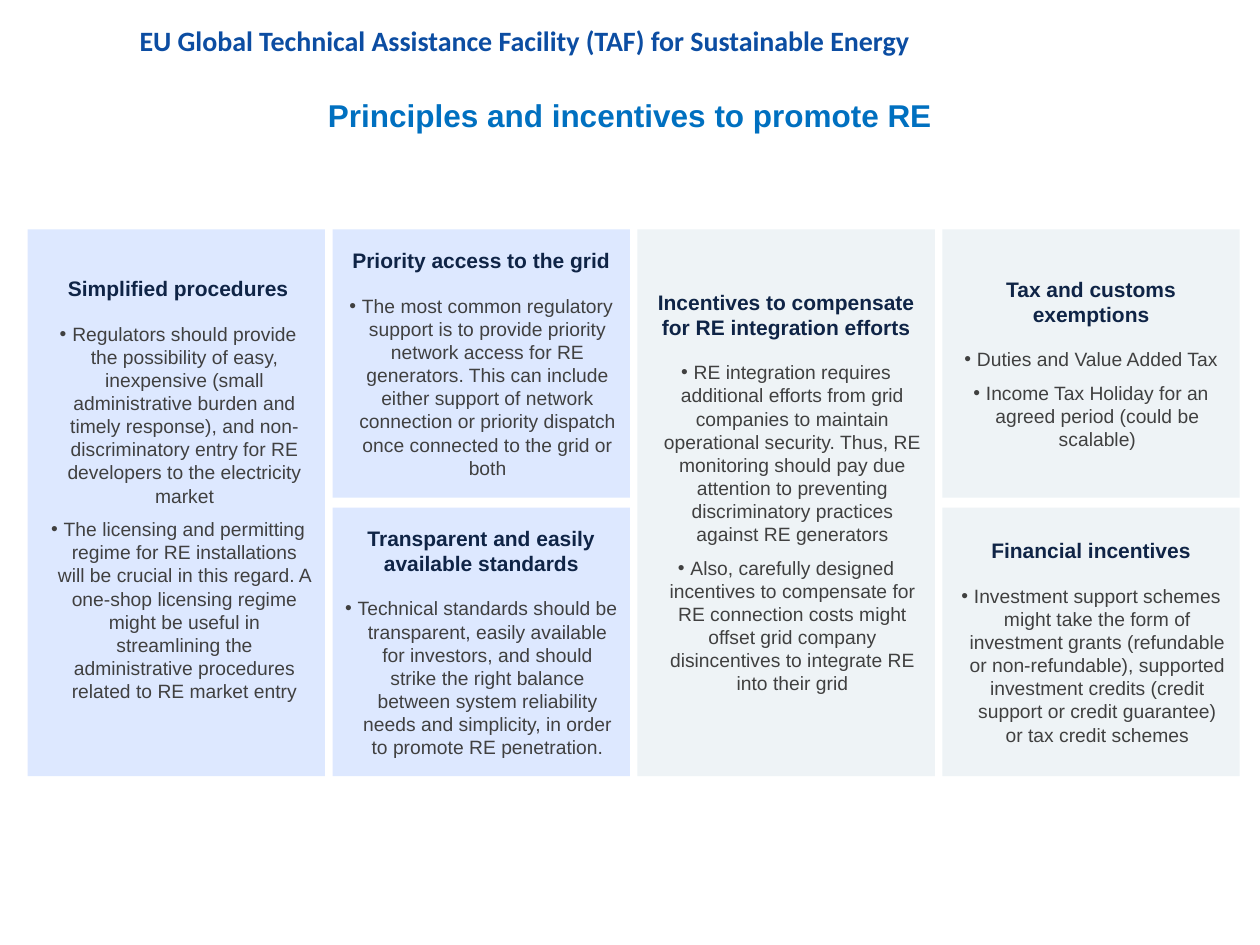
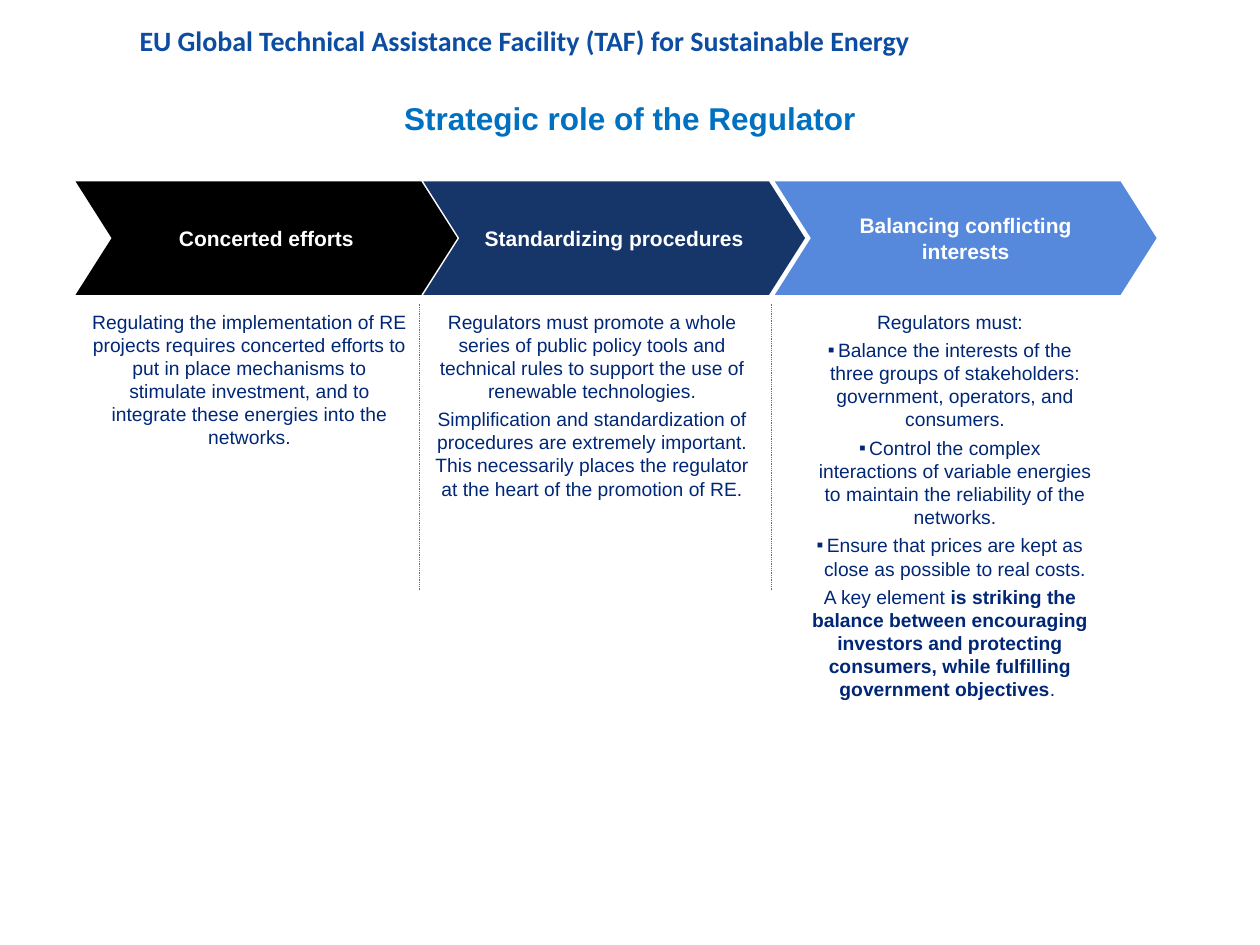
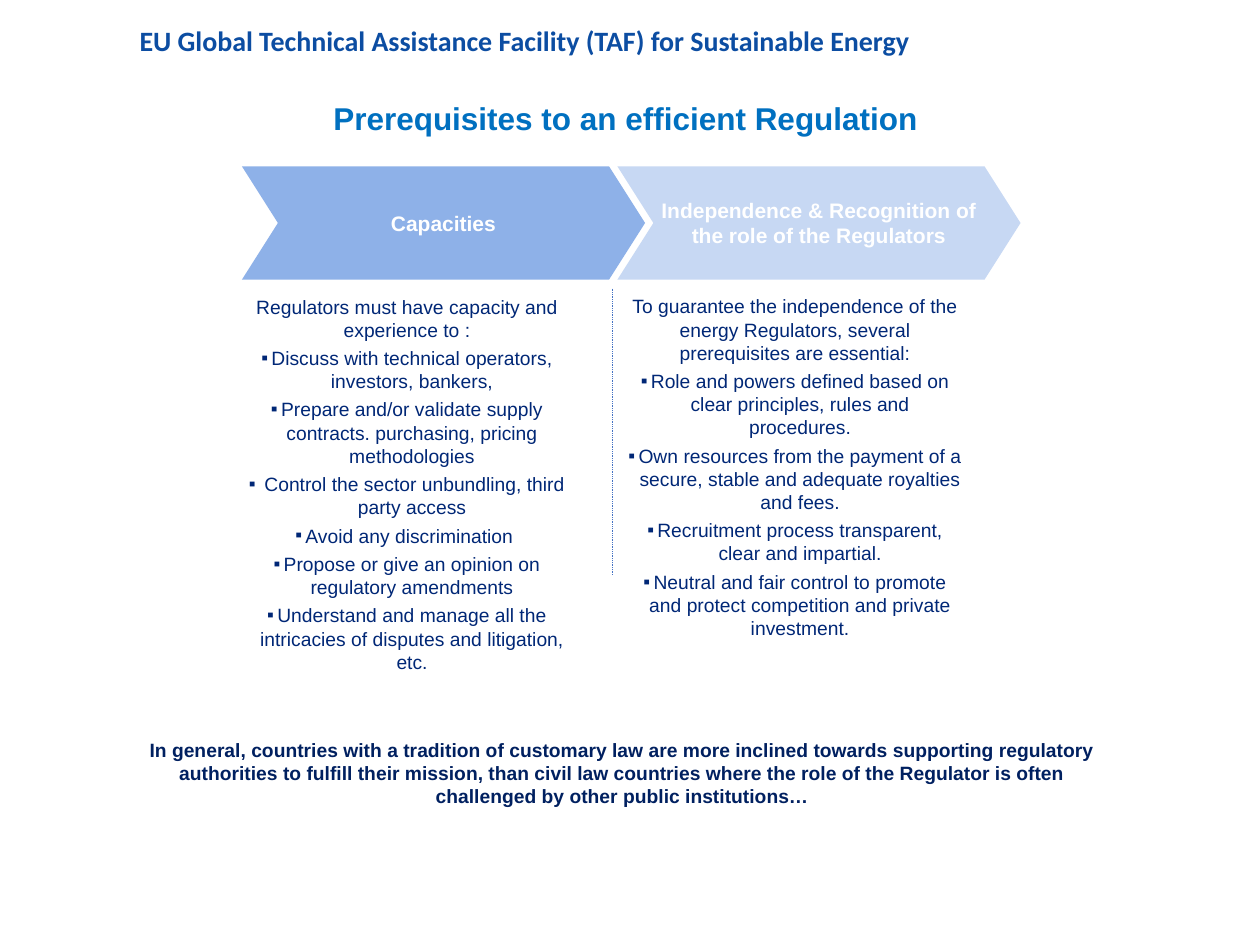
from lxml import etree
from pptx import Presentation
from pptx.dml.color import RGBColor
from pptx.enum.dml import MSO_LINE
from pptx.enum.shapes import MSO_CONNECTOR, MSO_SHAPE
from pptx.enum.text import MSO_ANCHOR, PP_ALIGN
from pptx.oxml.ns import qn
from pptx.util import Inches, Pt

HEADER_BLUE = RGBColor(0x0C, 0x4D, 0xA2)
TITLE_BLUE = RGBColor(0x00, 0x70, 0xC0)
HEADING_NAVY = RGBColor(0x0F, 0x24, 0x46)
BODY_GREY = RGBColor(0x40, 0x40, 0x40)
BODY_NAVY = RGBColor(0x00, 0x27, 0x76)
CLOSING_NAVY = RGBColor(0x00, 0x20, 0x60)
DIVIDER_BLUE = RGBColor(0x44, 0x72, 0xC4)
TILE_BLUE = RGBColor(0xDD, 0xE8, 0xFF)
TILE_GREY = RGBColor(0xEE, 0xF3, 0xF6)
WHITE = RGBColor(0xFF, 0xFF, 0xFF)
BLACK = RGBColor(0x00, 0x00, 0x00)
CHEVRON_NAVY = RGBColor(0x16, 0x36, 0x6A)
CHEVRON_BLUE = RGBColor(0x56, 0x89, 0xDC)
CHEVRON_LIGHT = RGBColor(0x8E, 0xB1, 0xE8)
CHEVRON_PALE = RGBColor(0xC7, 0xD8, 0xF3)

# style: font, size, colour, bold, space before, space after, bullet, indent
STYLES = {
    "header": ("Calibri", 16, HEADER_BLUE, True, 0, 0, None, 0),
    "title": ("Arial", 18, TITLE_BLUE, True, 0, 0, None, 0),
    "tile heading": ("Arial", 12, HEADING_NAVY, True, 0, 12, None, 0),
    "tile point": ("Arial", 11, BODY_GREY, False, 0, 6, "•", 0.1),
    "chevron": ("Arial", 12, WHITE, True, 0, 0, None, 0),
    "body": ("Arial", 11, BODY_NAVY, False, 1.5, 1.5, None, 0),
    "point": ("Arial", 11, BODY_NAVY, False, 1.5, 1.5, "▪", 0.08),
    "closing": ("Arial", 11, CLOSING_NAVY, True, 0, 0, None, 0),
}


def write_text(shape, rows, insets=(0.1, 0.05, 0.1, 0.05), align=PP_ALIGN.CENTER):
    frame = shape.text_frame
    frame.word_wrap = True
    frame.margin_left, frame.margin_top, frame.margin_right, frame.margin_bottom = map(Inches, insets)
    for index, (style, text) in enumerate(rows):
        font, size, colour, bold, before, after, bullet, indent = STYLES[style]
        para = frame.add_paragraph() if index else frame.paragraphs[0]
        para.alignment = align
        para.space_before = Pt(before if index else 0)
        para.space_after = Pt(after)
        if bullet:
            properties = para._p.get_or_add_pPr()
            properties.set("marL", str(Inches(indent)))
            properties.set("indent", str(-Inches(indent)))
            etree.SubElement(properties, qn("a:buFont")).set("typeface", "Arial")
            etree.SubElement(properties, qn("a:buChar")).set("char", bullet)
        for part, words in enumerate(text.split("*")):
            span = para.add_run()
            span.text = words
            span.font.name = font
            span.font.size = Pt(size)
            span.font.color.rgb = colour
            span.font.bold = bold or part % 2 == 1


def add_page(title, title_top):
    page = deck.slides.add_slide(deck.slide_layouts[6])
    header = page.shapes.add_textbox(Inches(1.01), Inches(0.14), Inches(8.66), Inches(0.34))
    write_text(header, [("header", "EU Global Technical Assistance Facility (TAF) for Sustainable Energy")],
               align=PP_ALIGN.LEFT)
    title_box = page.shapes.add_textbox(0, Inches(title_top), deck.slide_width, Inches(0.4))
    write_text(title_box, [("title", title)])
    return page


deck = Presentation()
deck.slide_width, deck.slide_height = Inches(10), Inches(7.5)

page = add_page("Principles and incentives to promote RE", 0.71)
TILE_WIDTH, TILE_HEIGHT = 2.36, 2.13
COLUMN_GAP, ROW_GAP = 0.06, 0.08
# column, row, rows spanned, fill, bottom inset, heading, points
tiles = [
    (0, 0, 2, TILE_BLUE, 0.05, None, []),
    (1, 0, 1, TILE_BLUE, 0.05, "Priority access to the grid", [
        "The most common regulatory support is to provide priority network access for RE generators. "
        "This can include either support of network connection or priority dispatch once connected "
        "to the grid or both"]),
    (1, 1, 1, TILE_BLUE, 0.05, "Transparent and easily available standards", [
        "Technical standards should be transparent, easily available for investors, and should strike "
        "the right balance between system reliability needs and simplicity, in order to promote RE "
        "penetration."]),
    (2, 0, 2, TILE_GREY, 0.22, "Incentives to compensate for RE integration efforts", [
        "RE integration requires additional efforts from grid companies to maintain operational "
        "security. Thus, RE monitoring should pay due attention to preventing discriminatory "
        "practices against RE generators",
        "Also, carefully designed incentives to compensate for RE connection costs might offset grid "
        "company disincentives to integrate RE into their grid"]),
    (3, 0, 1, TILE_GREY, 0.05, "Tax and customs exemptions", [
        "Duties and Value Added Tax",
        "Income Tax Holiday for an agreed period (could be scalable)"]),
    (3, 1, 1, TILE_GREY, 0.05, "Financial incentives", [
        "Investment support schemes might take the form of investment grants (refundable or "
        "non-refundable), supported investment credits (credit support or credit guarantee) or tax "
        "credit schemes"]),
]
for column, row, span_rows, fill, bottom_inset, heading, points in tiles:
    tile = page.shapes.add_shape(
        MSO_SHAPE.RECTANGLE,
        Inches(0.22 + column * (TILE_WIDTH + COLUMN_GAP)), Inches(1.82 + row * (TILE_HEIGHT + ROW_GAP)),
        Inches(TILE_WIDTH), Inches(span_rows * TILE_HEIGHT + (span_rows - 1) * ROW_GAP))
    tile.shadow.inherit = False
    tile.fill.solid()
    tile.fill.fore_color.rgb = fill
    tile.line.fill.background()
    tile.text_frame.vertical_anchor = MSO_ANCHOR.MIDDLE
    if heading:
        write_text(tile, [("tile heading", heading)] + [("tile point", point) for point in points],
                   (0.1, 0.05, 0.1, bottom_inset))

procedures = page.shapes.add_textbox(Inches(0.25), Inches(2.14), Inches(2.33), Inches(3.52))
write_text(procedures, [
    ("tile heading", "Simplified procedures"),
    ("tile point", "Regulators should provide the possibility of easy, inexpensive (small administrative "
                   "burden and timely response), and non-discriminatory entry for RE developers to the "
                   "electricity market"),
    ("tile point", "The licensing and permitting regime for RE installations will be crucial in this "
                   "regard. A one-shop licensing regime might be useful in streamlining the "
                   "administrative procedures related to RE market entry"),
])

# title, chevron top, chevron width, divider positions, stages
# stage: chevron left, fill, heading, text left, text width, text height, rows
stage_pages = [
    ("Strategic role of the Regulator", 1.44, 3.03, [3.33, 6.12], [
        (0.6, BLACK, "Concerted efforts", 0.73, 2.6, 1.95, [
            ("body", "Regulating the implementation of RE projects requires concerted efforts to put in "
                     "place mechanisms to stimulate investment, and to integrate these energies into "
                     "the networks.")]),
        (3.36, CHEVRON_NAVY, "Standardizing procedures", 3.45, 2.6, 2.93, [
            ("body", "Regulators must promote a whole series of public policy tools and technical rules "
                     "to support the use of renewable technologies."),
            ("body", "Simplification and standardization of procedures are extremely important. This "
                     "necessarily places the regulator at the heart of the promotion of RE.")]),
        (6.15, CHEVRON_BLUE, "Balancing conflicting interests", 6.41, 2.36, 3.29, [
            ("body", "Regulators must:"),
            ("point", "Balance the interests of the three groups of stakeholders: government, "
                      "operators, and consumers."),
            ("point", "Control the complex interactions of variable energies to maintain the "
                      "reliability of the networks."),
            ("point", "Ensure that prices are kept as close as possible to real costs."),
            ("body", "A key element *is striking the balance between encouraging investors and "
                     "protecting consumers, while fulfilling government objectives*. ")]),
    ]),
    ("Prerequisites to an efficient Regulation ", 1.32, 3.2, [4.86], [
        (1.92, CHEVRON_LIGHT, "Capacities", 1.91, 2.74, 3.21, [
            ("body", "Regulators must have capacity and experience to :"),
            ("point", "Discuss with technical operators, investors, bankers,"),
            ("point", "Prepare and/or validate supply contracts. purchasing, pricing methodologies"),
            ("point", " Control the sector unbundling, third party access"),
            ("point", "Avoid any discrimination "),
            ("point", "Propose or give an opinion on regulatory amendments"),
            ("point", "Understand and manage all the intricacies of disputes and litigation, etc.")]),
        (4.9, CHEVRON_PALE, "Independence & Recognition of the role of the Regulators", 4.98, 2.76, 4.4, [
            ("body", "To guarantee the independence of the energy Regulators, several prerequisites are "
                     "essential:"),
            ("point", "Role and powers defined based on clear principles, rules and procedures."),
            ("point", "Own resources from the payment of a secure, stable and adequate royalties and "
                      "fees."),
            ("point", "Recruitment process transparent, clear and impartial."),
            ("point", "Neutral and fair control to promote and protect competition and private "
                      "investment.")]),
    ]),
]
for title, chevron_top, chevron_width, dividers, stages in stage_pages:
    page = add_page(title, 0.74)
    text_top = chevron_top + 0.97
    for chevron_left, fill, heading, text_left, text_width, text_height, rows in stages:
        chevron = page.shapes.add_shape(MSO_SHAPE.CHEVRON, Inches(chevron_left), Inches(chevron_top),
                                        Inches(chevron_width), Inches(0.9))
        chevron.adjustments[0] = 0.318
        chevron.shadow.inherit = False
        chevron.fill.solid()
        chevron.fill.fore_color.rgb = fill
        chevron.line.fill.background()
        chevron.text_frame.vertical_anchor = MSO_ANCHOR.MIDDLE
        write_text(chevron, [("chevron", heading)], (0.06, 0.04, 0.06, 0.04))
        box = page.shapes.add_textbox(Inches(text_left), Inches(text_top),
                                      Inches(text_width), Inches(text_height))
        write_text(box, rows, (0, 0.05, 0.1, 0.05))
    for divider_left in dividers:
        divider = page.shapes.add_connector(MSO_CONNECTOR.STRAIGHT, Inches(divider_left), Inches(text_top),
                                            Inches(divider_left), Inches(text_top + 2.27))
        divider.line.color.rgb = DIVIDER_BLUE
        divider.line.width = Pt(0.5)
        divider.line.dash_style = MSO_LINE.ROUND_DOT
        etree.SubElement(divider._element.spPr, qn("a:effectLst"))

closing = page.shapes.add_textbox(Inches(0.98), Inches(5.81), Inches(7.92), Inches(0.66))
write_text(closing, [
    ("closing", "In general, countries with a tradition of customary law are more inclined towards "
                "supporting regulatory authorities to fulfill their mission, than civil law countries "
                "where the role of the Regulator is often challenged by other public institutions…")])

deck.save("out.pptx")
